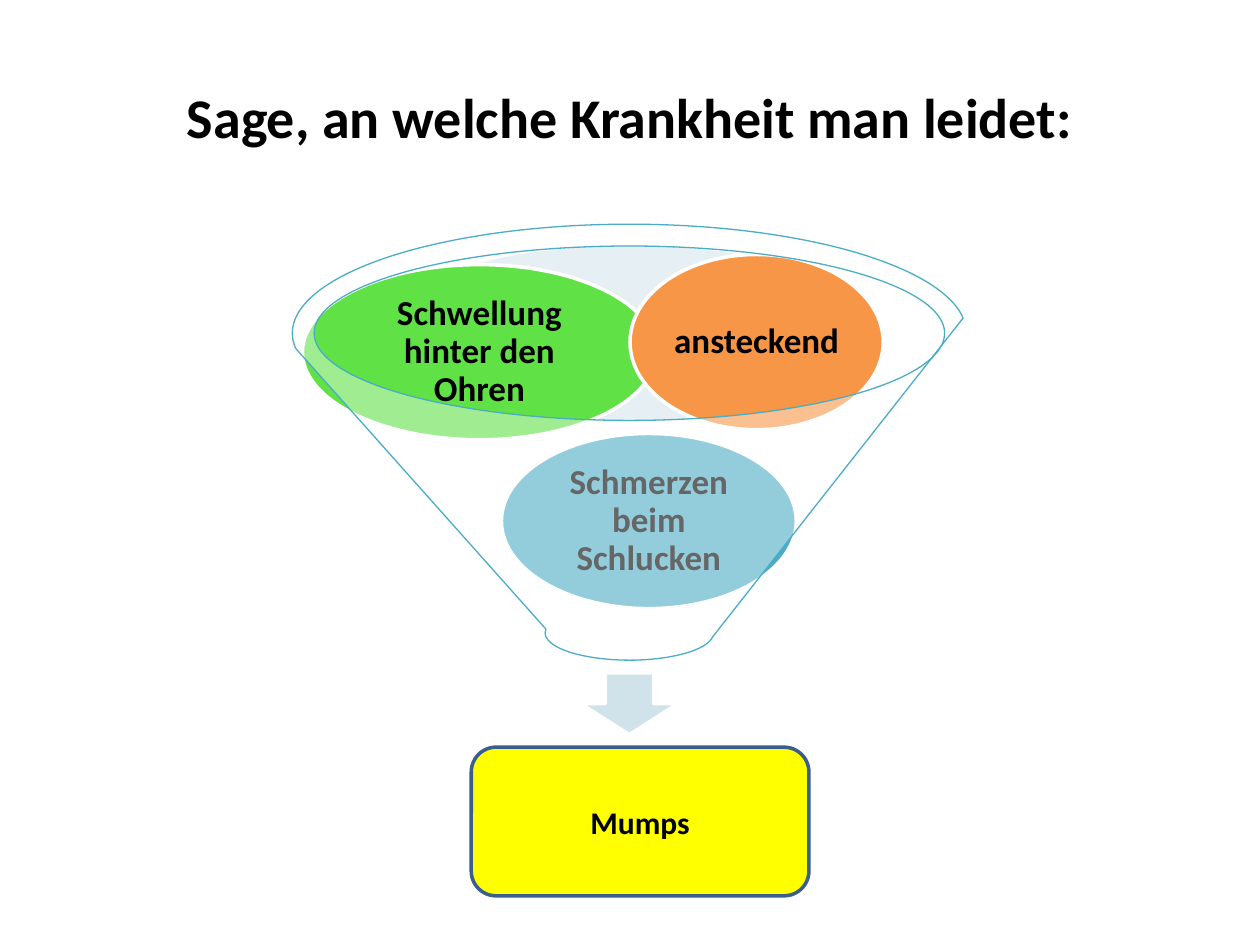
import pptx
import pptx.util
import pptx.dml.color
import pptx.enum.shapes
import pptx.enum.text
import pptx.oxml.ns
import lxml.etree

Inches, Pt = pptx.util.Inches, pptx.util.Pt
KIND = pptx.enum.shapes.MSO_SHAPE
MID = pptx.enum.text.MSO_ANCHOR.MIDDLE
CENTER = pptx.enum.text.PP_ALIGN.CENTER

# Content
TITLE = "Sage, an welche Krankheit man leidet:"
ANSWER = "Mumps"
COLORS = {
    "black": "000000", "white": "FFFFFF", "pale": "C1DBE5",
    "arrow": "D0E3EA", "teal": "4BACC6", "green": "60E146",
    "orange": "F79646", "yellow": "FFFF00", "navy": "3A5F8C",
}
# Symptoms: text, fill, left, top, width
SIGNS = [
    ("Schmerzen beim Schlucken", "teal", 3.98, 3.44, 2.34),
    ("Schwellung hinter den Ohren", "green", 2.4, 2.1, 2.81),
    ("ansteckend", "orange", 5, 2.02, 2.01),
]
SIGN_H = 1.39


def color(name):
    return pptx.dml.color.RGBColor.from_string(COLORS[name])


def draw(kind, box, fill, line=None, width=2, alpha=None):
    shape = slide.shapes.add_shape(kind, *map(Inches, box))
    shape.shadow.inherit = False
    shape.fill.solid()
    shape.fill.fore_color.rgb = color(fill)
    if alpha:
        tint = shape.fill._xPr.find(".//" + pptx.oxml.ns.qn("a:srgbClr"))
        lxml.etree.SubElement(tint, pptx.oxml.ns.qn("a:alpha"),
                              val=str(alpha * 1000))
    if line:
        shape.line.color.rgb = color(line)
        shape.line.width = Pt(width)
    else:
        shape.line.fill.background()
    return shape


def write(shape, text, size):
    frame = shape.text_frame
    frame.text = text
    frame.word_wrap = True
    frame.vertical_anchor = MID
    para = frame.paragraphs[0]
    para.alignment = CENTER
    font = para.font
    font.name, font.size, font.bold = "Calibri", Pt(size), True
    font.color.rgb = color("black")
    return frame


deck = pptx.Presentation()
deck.slide_width, deck.slide_height = Inches(10), Inches(7.5)
slide = deck.slides.add_slide(deck.slide_layouts[5])

# Title
title = slide.shapes.title
title.left, title.top, title.width, title.height = map(
    Inches, (0.5, 0.3, 9, 1.25))
write(title, TITLE, 32)

# Funnel mouth and outlet arrow
draw(KIND.OVAL, (3, 1.95, 3.99, SIGN_H), "pale", alpha=40)
draw(KIND.DOWN_ARROW, (4.61, 5.34, 0.77, 0.49), "arrow", "white")

# Symptoms
for text, fill, left, top, width in SIGNS:
    oval = draw(KIND.OVAL, (left, top, width, SIGN_H), fill, "white")
    frame = write(oval, text, 20)
    frame.margin_left = frame.margin_right = Inches(0.03)
    frame.margin_top = frame.margin_bottom = Inches(0.03)
    frame.paragraphs[0].line_spacing = 0.9

# Funnel over the symptoms
draw(KIND.FUNNEL, (2.32, 1.78, 5.35, 3.46), "white", "teal", 0.75, 40)

# Answer
box = draw(KIND.ROUNDED_RECTANGLE, (3.74, 5.93, 2.68, 1.18), "yellow", "navy")
write(box, ANSWER, 18)

deck.save("out.pptx")
